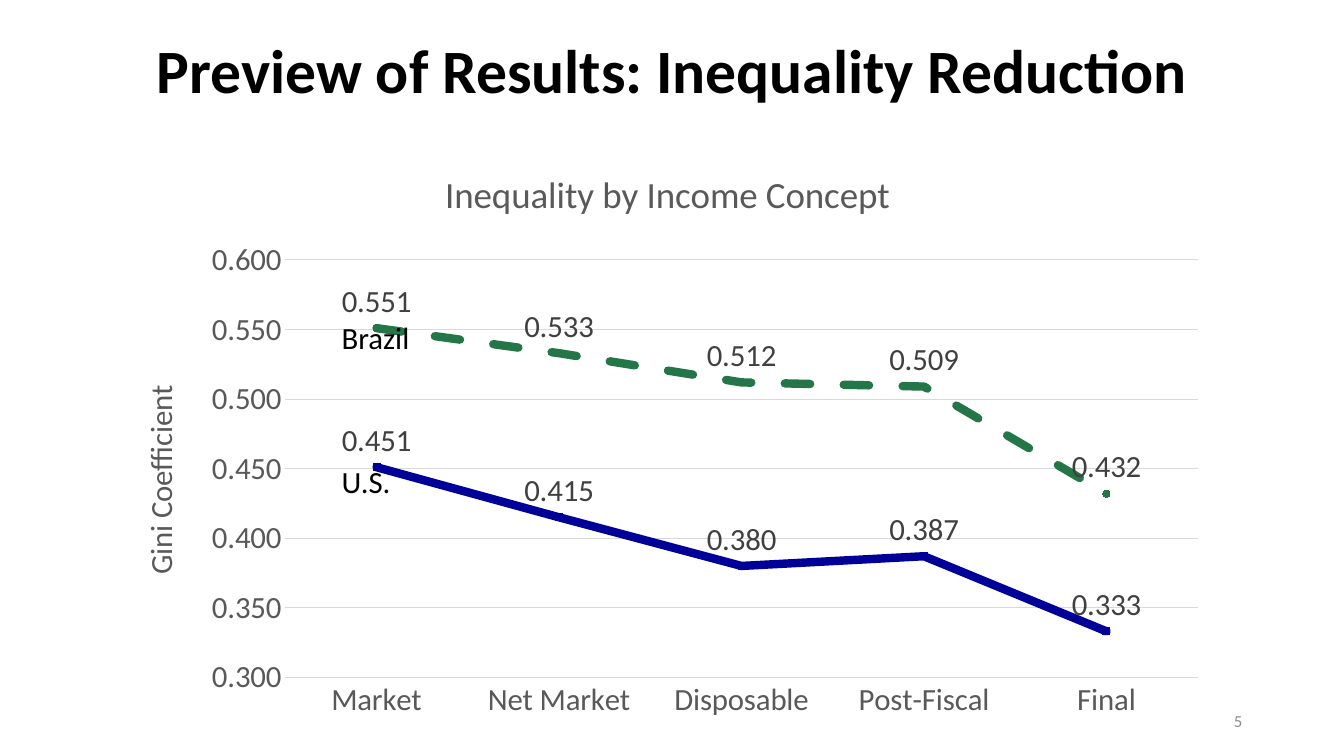
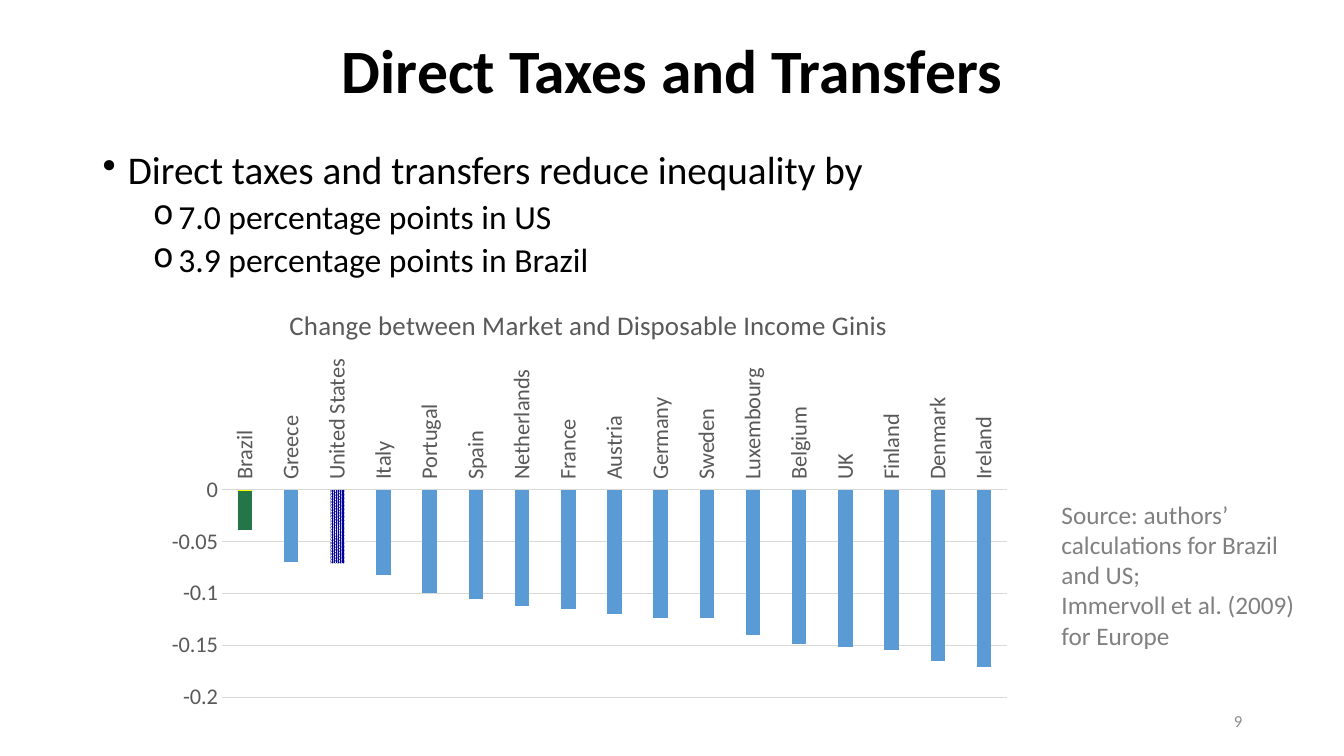
from dataclasses import dataclass

from lxml import etree
from pptx import Presentation
from pptx import util as u
from pptx.chart import data as chart_data
from pptx.dml.color import RGBColor
from pptx.enum import chart as chart_enum
from pptx.enum import dml, text
from pptx.oxml.ns import qn

# Shared style
FONT = "Calibri"
BLACK, GRAY, LABEL_GRAY = "000000", "595959", "404040"
SOURCE_GRAY, NUMBER_GRAY, GRID = "808080", "8C8C8C", "D9D9D9"
GREEN, NAVY, BLUE, YELLOW, WHITE = "247649", "000099", "5B9BD5", "FFFF00", "FFFFFF"


@dataclass(frozen=True)
class Box:
    left: float
    top: float
    width: float
    height: float

    def lengths(self):
        return [u.Inches(value) for value in (self.left, self.top, self.width, self.height)]


@dataclass(frozen=True)
class LineStyle:
    name: str
    values: tuple
    color: str
    marker: chart_enum.XL_MARKER_STYLE
    dash: dml.MSO_LINE


@dataclass(frozen=True)
class Bullet:
    wording: str
    size: float
    character: str
    level: int
    before: float


TITLE_BOX = Box(0.92, 0, 11.5, 1.45)
NUMBER_BOX = Box(9.42, 6.95, 3, 0.4)

# Slide 1 data
CONCEPTS = ("Market", "Net Market", "Disposable", "Post-Fiscal", "Final")
LINES = (
    LineStyle("U.S.", (0.451, 0.415, 0.38, 0.387, 0.333), NAVY,
              chart_enum.XL_MARKER_STYLE.SQUARE, dml.MSO_LINE.SOLID),
    LineStyle("Brazil", (0.551, 0.533, 0.512, 0.509, 0.432), GREEN,
              chart_enum.XL_MARKER_STYLE.CIRCLE, dml.MSO_LINE.DASH),
)
LINE_NAMES = (("Brazil", Box(3.29, 3.11, 1.36, 0.47)),
              ("U.S.", Box(3.29, 4.54, 1.57, 0.47)))

# Slide 2 data
GINI_CHANGES = {
    "Brazil": -0.039, "Greece": -0.07, "United States": -0.071, "Italy": -0.082,
    "Portugal": -0.099, "Spain": -0.105, "Netherlands": -0.112, "France": -0.115,
    "Austria": -0.12, "Germany": -0.124, "Sweden": -0.124, "Luxembourg": -0.14,
    "Belgium": -0.149, "UK": -0.151, "Finland": -0.154, "Denmark": -0.165,
    "Ireland": -0.171,
}
PATTERNS = {
    "Brazil": (dml.MSO_PATTERN.DARK_HORIZONTAL, GREEN, YELLOW),
    "United States": (dml.MSO_PATTERN.PERCENT_90, NAVY, WHITE),
}
BULLETS = (
    Bullet("Direct taxes and transfers reduce inequality by", 28, "•", 0, 10),
    Bullet("7.0 percentage points in US", 24, "o", 1, 5),
    Bullet("3.9 percentage points in Brazil", 24, "o", 1, 5),
)


# Text
def rgb(value: str) -> RGBColor:
    return RGBColor.from_string(value)


def style_font(font, size: float, color: str, bold: bool = False) -> None:
    font.name, font.size, font.bold = FONT, u.Pt(size), bold
    font.color.rgb = rgb(color)


def add_text(slide, box: Box, wording: str, *, size: float = 22, color: str = BLACK,
             bold: bool = False, align=text.PP_ALIGN.LEFT,
             anchor=text.MSO_ANCHOR.TOP, spacing: float = 1.0):
    frame = slide.shapes.add_textbox(*box.lengths()).text_frame
    frame.word_wrap = True
    frame.vertical_anchor = anchor
    for index, line in enumerate(wording.split("\n")):
        paragraph = frame.paragraphs[0] if index == 0 else frame.add_paragraph()
        paragraph.alignment = align
        paragraph.line_spacing = spacing
        run = paragraph.add_run()
        run.text = line
        style_font(run.font, size, color, bold)
    return frame


def add_bullets(slide, box: Box, bullets: tuple) -> None:
    wording = "\n".join(bullet.wording for bullet in bullets)
    frame = add_text(slide, box, wording, spacing=0.9)
    for paragraph, bullet in zip(frame.paragraphs, bullets):
        paragraph.level = bullet.level
        paragraph.space_before = u.Pt(bullet.before)
        paragraph.runs[0].font.size = u.Pt(bullet.size)
        properties = paragraph._p.get_or_add_pPr()
        properties.set("marL", str(u.Inches(0.25 + 0.5 * bullet.level)))
        properties.set("indent", str(u.Inches(-0.25)))
        etree.SubElement(properties, qn("a:buChar")).set("char", bullet.character)


def add_slide(presentation, title: str, number: int):
    slide = presentation.slides.add_slide(presentation.slide_layouts[6])
    add_text(slide, TITLE_BOX, title, size=44, bold=True, spacing=0.9,
             align=text.PP_ALIGN.CENTER, anchor=text.MSO_ANCHOR.MIDDLE)
    add_text(slide, NUMBER_BOX, str(number), size=12, color=NUMBER_GRAY,
             align=text.PP_ALIGN.RIGHT, anchor=text.MSO_ANCHOR.MIDDLE)
    return slide


# Charts
def set_title(owner, wording: str, size: float) -> None:
    paragraph = owner.text_frame.paragraphs[0]
    run = paragraph.add_run()
    run.text = wording
    style_font(run.font, size, GRAY)


def place_plot(chart, box: Box, plot: Box) -> None:
    """Fix the inner plot area, given in slide inches."""
    area = chart.element.find(".//" + qn("c:plotArea"))
    for old in area.findall(qn("c:layout")):
        area.remove(old)
    layout = etree.Element(qn("c:layout"))
    manual = etree.SubElement(layout, qn("c:manualLayout"))
    settings = {
        "layoutTarget": "inner", "xMode": "edge", "yMode": "edge",
        "x": (plot.left - box.left) / box.width,
        "y": (plot.top - box.top) / box.height,
        "w": plot.width / box.width, "h": plot.height / box.height,
    }
    for name, value in settings.items():
        etree.SubElement(manual, qn("c:" + name)).set("val", str(value))
    area.insert(0, layout)


def add_chart(slide, kind, box: Box, plot: Box, categories, series: dict, *, title: str,
              size: float, low: float, high: float, number_format: str):
    data = chart_data.CategoryChartData(number_format=number_format)
    data.categories = categories
    for name, values in series.items():
        data.add_series(name, values)
    chart = slide.shapes.add_chart(kind, *box.lengths(), data).chart
    style_font(chart.font, size, BLACK)
    chart.has_legend = False
    chart.has_title = True
    set_title(chart.chart_title, title, size * 1.2)
    chart.plots[0].vary_by_categories = False
    for axis in (chart.category_axis, chart.value_axis):
        axis.major_tick_mark = axis.minor_tick_mark = chart_enum.XL_TICK_MARK.NONE
        style_font(axis.tick_labels.font, size, GRAY)
    value_axis = chart.value_axis
    value_axis.minimum_scale, value_axis.maximum_scale = low, high
    value_axis.major_unit = 0.05
    value_axis.tick_labels.number_format = number_format
    value_axis.tick_labels.number_format_is_linked = False
    value_axis.has_major_gridlines = True
    value_axis.format.line.fill.background()
    for line in (value_axis.major_gridlines.format.line, chart.category_axis.format.line):
        line.color.rgb = rgb(GRID)
        line.width = u.Pt(0.75)
    place_plot(chart, box, plot)
    return chart


def turn_upright(chart, element_name: str) -> None:
    body = chart.element.find(f".//{qn(element_name)}//{qn('a:bodyPr')}")
    body.set("rot", "-5400000")
    body.set("vert", "horz")


def style_line_series(series, style: LineStyle) -> None:
    series.smooth = False
    line = series.format.line
    line.color.rgb = rgb(style.color)
    line.width = u.Pt(6)
    line.dash_style = style.dash
    marker = series.marker
    marker.style, marker.size = style.marker, 5
    marker.format.fill.solid()
    marker.format.fill.fore_color.rgb = rgb(style.color)
    marker.format.line.color.rgb = rgb(style.color)
    labels = series.data_labels
    labels.show_value = True
    labels.position = chart_enum.XL_LABEL_POSITION.ABOVE
    labels.number_format, labels.number_format_is_linked = "0.000", False
    style_font(labels.font, 22, LABEL_GRAY)


# Slides
def build_results(presentation) -> None:
    slide = add_slide(presentation, "Preview of Results: Inequality Reduction", 5)
    chart = add_chart(
        slide, chart_enum.XL_CHART_TYPE.LINE_MARKERS, Box(1.14, 1.45, 10.96, 5.8),
        Box(2.83, 2.58, 9.05, 4.14), CONCEPTS, {line.name: line.values for line in LINES},
        title="Inequality by Income Concept", size=22, low=0.3, high=0.6,
        number_format="0.000")
    chart.value_axis.has_title = True
    set_title(chart.value_axis.axis_title, "Gini Coefficient", 22)
    turn_upright(chart, "c:valAx")
    for series, style in zip(chart.plots[0].series, LINES):
        style_line_series(series, style)
    for outline in chart.element.iterfind(
            f".//{qn('c:ser')}/{qn('c:spPr')}/{qn('a:ln')}"):
        outline.set("cap", "rnd")
    for name, box in LINE_NAMES:
        add_text(slide, box, name)


def build_taxes(presentation) -> None:
    slide = add_slide(presentation, "Direct Taxes and Transfers", 9)
    add_bullets(slide, Box(0.92, 1.45, 11.5, 4.76), BULLETS)
    chart = add_chart(
        slide, chart_enum.XL_CHART_TYPE.COLUMN_CLUSTERED, Box(1.53, 2.85, 8.62, 4.3),
        Box(2.2, 4.86, 7.79, 2.06), list(GINI_CHANGES),
        {"Change in Gini": tuple(GINI_CHANGES.values())},
        title="Change between Market and Disposable Income Ginis", size=16,
        low=-0.2, high=0, number_format="General")
    chart.category_axis.tick_label_position = chart_enum.XL_TICK_LABEL_POSITION.HIGH
    turn_upright(chart, "c:catAx")
    columns = chart.plots[0]
    columns.gap_width, columns.overlap = 219, -27
    series = columns.series[0]
    series.invert_if_negative = False
    series.format.fill.solid()
    series.format.fill.fore_color.rgb = rgb(BLUE)
    for index, country in enumerate(GINI_CHANGES):
        if country in PATTERNS:
            pattern, front, back = PATTERNS[country]
            fill = series.points[index].format.fill
            fill.patterned()
            fill.pattern = pattern
            fill.fore_color.rgb, fill.back_color.rgb = rgb(front), rgb(back)
    add_text(slide, Box(10.43, 4.9, 2.56, 1.62),
             "Source: authors’ calculations for Brazil and US;\n"
             "Immervoll et al. (2009) for Europe", size=18, color=SOURCE_GRAY)


def main() -> None:
    presentation = Presentation()
    presentation.slide_width, presentation.slide_height = u.Inches(13.33), u.Inches(7.5)
    build_results(presentation)
    build_taxes(presentation)
    presentation.save("out.pptx")


if __name__ == "__main__":
    main()
